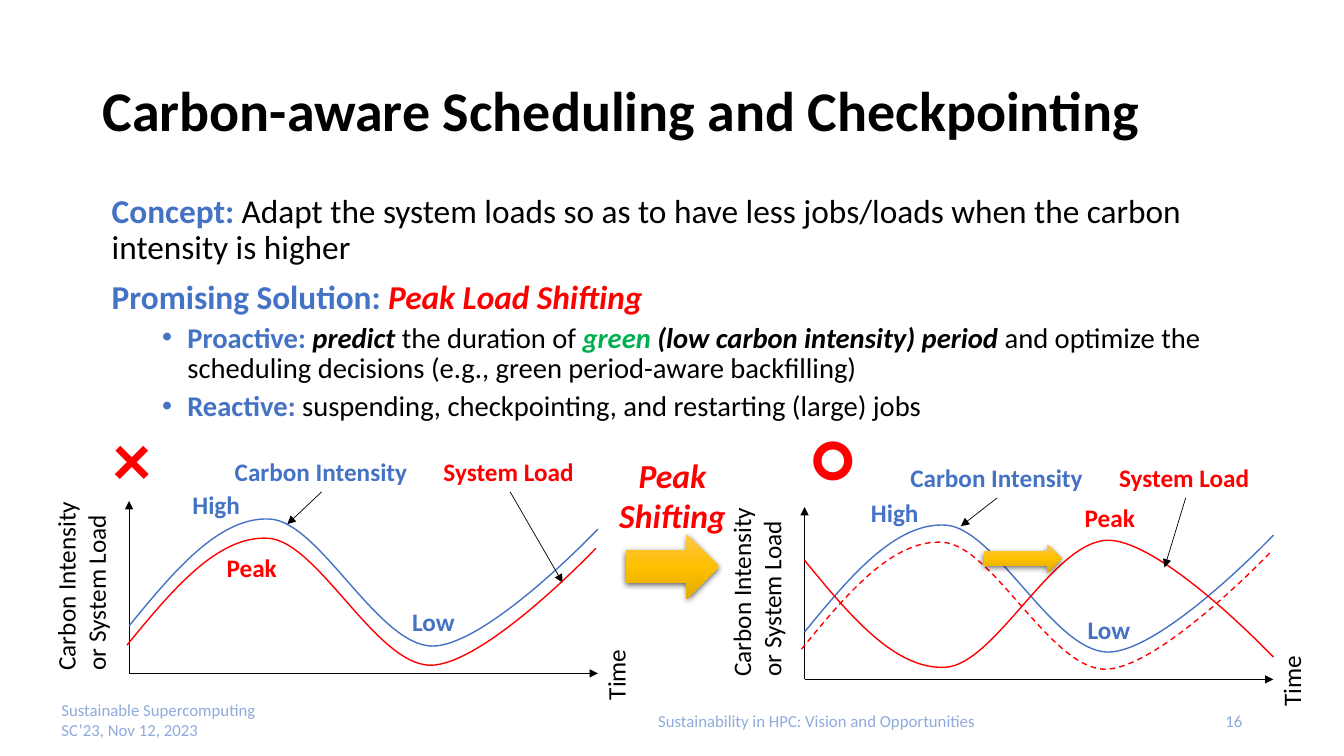
from pptx import Presentation
from pptx import util as u
from pptx.dml.color import RGBColor
from pptx.enum import dml, shapes, text
from pptx.oxml import parse_xml
from pptx.oxml.ns import nsdecls, qn
from lxml import etree

PX = 9144  # EMU per px, 100 px to the inch
FONT = "Calibri"
COLORS = {
    "black": "000000", "blue": "4472C4", "red": "FF0000", "green": "00B050",
    "footer": "8FAADC", "gold_light": "FFC64B", "gold": "FFC000", "gold_dark": "E3AB00",
}
# Start point, then three points for each cubic segment, relative to the crest
WAVE = [(0, 106), (45, 51), (90, -3), (140, 0), (189, 3), (246, 124),
        (300, 126), (354, 127), (465, 10), (465, 10)]

BODY = [
    (0, [("Concept: ", "blue", "b"),
         ("Adapt the system loads so as to have less jobs/loads when the carbon "
          "intensity is higher", "black", "")]),
    (0, [("Promising Solution: ", "blue", "b"), ("Peak Load Shifting", "red", "bi")]),
    (1, [("Proactive: ", "blue", "b"), ("predict ", "black", "bi"),
         ("the duration of ", "black", ""), ("green ", "green", "bi"),
         ("(low carbon intensity) period ", "black", "bi"),
         ("and optimize the scheduling decisions (e.g., green period-aware backfilling)",
          "black", "")]),
    (1, [("Reactive: ", "blue", "b"),
         ("suspending, checkpointing, and restarting (large) jobs", "black", "")]),
]


def px(*lengths):
    return [u.Emu(round(length * PX)) for length in lengths]


def rgb(color):
    return RGBColor.from_string(COLORS[color])


def add_run(paragraph, words, size, color, bold=False, italic=False):
    run = paragraph.add_run()
    run.text = words
    font = run.font
    font.name, font.size, font.bold, font.italic = FONT, u.Pt(size), bold, italic
    font.color.rgb = rgb(color)


def add_text(slide, words, box, size=18, color="black", bold=False, italic=False,
             align=text.PP_ALIGN.LEFT, anchor=text.MSO_ANCHOR.TOP, wrap=False,
             rotation=0, line_spacing=None):
    """Add a text box with one paragraph for each line of words."""
    shape = slide.shapes.add_textbox(*px(*box))
    shape.rotation = rotation
    frame = shape.text_frame
    frame.word_wrap, frame.vertical_anchor = wrap, anchor
    for index, line in enumerate(words.split("\n")):
        paragraph = frame.add_paragraph() if index else frame.paragraphs[0]
        paragraph.alignment = align
        paragraph.line_spacing = line_spacing
        add_run(paragraph, line, size, color, bold, italic)


def add_bullet(paragraph, color):
    properties = paragraph._p.get_or_add_pPr()
    properties.set("marL", str(75 * PX))
    properties.set("indent", str(-25 * PX))
    bullet_color = etree.SubElement(properties, qn("a:buClr"))
    etree.SubElement(bullet_color, qn("a:srgbClr"), val=COLORS[color])
    etree.SubElement(properties, qn("a:buFont"), typeface="Arial")
    etree.SubElement(properties, qn("a:buChar"), char="•")


def add_body(slide):
    frame = slide.shapes.add_textbox(*px(101, 188, 1168, 247)).text_frame
    frame.word_wrap = True
    for index, (level, runs) in enumerate(BODY):
        paragraph = frame.add_paragraph() if index else frame.paragraphs[0]
        if level:
            paragraph.level = level
            add_bullet(paragraph, "blue")
        paragraph.line_spacing = 0.9
        if index:
            paragraph.space_before = u.Pt(5 if level else 10)
        for words, color, style in runs:
            add_run(paragraph, words, 20.4 if level else 23.8, color,
                    "b" in style, "i" in style)


def add_arrow_line(slide, start, end):
    line = slide.shapes.add_connector(shapes.MSO_CONNECTOR.STRAIGHT, *px(*start, *end))
    line.line.width = u.Pt(0.5)
    line.line.color.rgb = rgb("black")
    etree.SubElement(line.line._get_or_add_ln(), qn("a:tailEnd"), type="triangle")
    etree.SubElement(line._element.spPr, qn("a:effectLst"))


def add_wave(slide, left, crest, color, direction=1, dashed=False):
    """Draw the wave; direction -1 turns it upside down about the crest line."""
    points = [(x, direction * y) for x, y in WAVE]
    anchors = points[::3]
    top = min(y for _, y in anchors)
    corners = [px(left + x, crest + y) for x, y in anchors]
    builder = slide.shapes.build_freeform(*corners[0])
    builder.add_line_segments(corners[1:], close=False)
    shape = builder.convert_to_shape()
    # Each straight segment becomes a cubic one by adding its two control points
    for index, segment in enumerate(list(shape._element.iter(qn("a:lnTo")))):
        segment.tag = qn("a:cubicBezTo")
        for place, (x, y) in enumerate(points[3 * index + 1:3 * index + 3]):
            control = etree.Element(qn("a:pt"), x=str(x * PX), y=str((y - top) * PX))
            segment.insert(place, control)
    shape.shadow.inherit = False
    shape.fill.background()
    shape.line.color.rgb = rgb(color)
    shape.line.width = u.Pt(1)
    if dashed:
        shape.line.dash_style = dml.MSO_LINE.DASH


def add_block_arrow(slide, box):
    shape = slide.shapes.add_shape(shapes.MSO_SHAPE.RIGHT_ARROW, *px(*box))
    stops = "".join(
        f'<a:gs pos="{position}"><a:srgbClr val="{COLORS[color]}"/></a:gs>'
        for position, color in ((0, "gold_light"), (50000, "gold"), (100000, "gold_dark")))
    properties = shape._element.spPr
    properties.append(parse_xml(
        f'<a:gradFill {nsdecls("a")} rotWithShape="1"><a:gsLst>{stops}</a:gsLst>'
        '<a:lin ang="5400000" scaled="0"/></a:gradFill>'))
    shape.line.fill.background()
    properties.append(parse_xml(
        f'<a:effectLst {nsdecls("a")}><a:outerShdw blurRad="57150" dist="19050" '
        'dir="5400000" algn="ctr" rotWithShape="0"><a:srgbClr val="000000">'
        '<a:alpha val="63000"/></a:srgbClr></a:outerShdw></a:effectLst>'))


def add_chart_frame(slide, left, bottom):
    """Add axes, axis names, curve names and the carbon intensity wave."""
    add_text(slide, "Time", (left + 447, bottom - 19, 71, 40), rotation=270)
    add_arrow_line(slide, (left, bottom), (left, bottom - 171))
    add_arrow_line(slide, (left, bottom), (left + 465, bottom))
    add_text(slide, "Carbon Intensity\nor System Load",
             (left - 145, bottom - 126, 195, 71), rotation=270)
    add_wave(slide, left, bottom - 153, "blue")
    for words, offset, width, color in (("Carbon Intensity", 95, 193, "blue"),
                                        ("System Load", 302, 151, "red")):
        add_text(slide, words, (left + offset, bottom - 220, width, 40),
                 color=color, bold=True)


def add_marks(slide, high, peak, low, verdict, verdict_box):
    """Add the labels along the curves and the verdict sign of a chart."""
    for words, corner, width, color in (("Peak", peak, 70, "red"),
                                        ("High", high, 68, "blue"),
                                        ("Low", low, 63, "blue")):
        add_text(slide, words, (*corner, width, 40), color=color, bold=True)
    add_text(slide, verdict, verdict_box, size=54, color="red", bold=True)


def main():
    presentation = Presentation()
    presentation.slide_width, presentation.slide_height = px(1333, 750)
    slide = presentation.slides.add_slide(presentation.slide_layouts[6])

    middle = text.MSO_ANCHOR.MIDDLE
    add_text(slide, "Carbon-aware Scheduling and Checkpointing", (92, 40, 1150, 145),
             size=40, bold=True, anchor=middle, wrap=True, line_spacing=0.9)
    add_body(slide)
    for words, box, align in (
            ("Sustainable Supercomputing SC’23, Nov 12, 2023", (51, 694, 219, 40),
             text.PP_ALIGN.LEFT),
            ("Sustainability in HPC: Vision and Opportunities", (607, 695, 406, 40),
             text.PP_ALIGN.CENTER),
            ("16", (1086, 695, 156, 40), text.PP_ALIGN.RIGHT)):
        add_text(slide, words, box, size=12, color="footer", align=align,
                 anchor=middle, wrap=True)

    add_chart_frame(slide, 128, 668)
    add_arrow_line(slide, (319, 488), (285, 520))
    add_arrow_line(slide, (506, 488), (558, 578))
    add_marks(slide, (181, 481), (215, 543), (399, 597), "×", (103, 403, 58, 101))
    add_wave(slide, 126, 534, "red")

    add_block_arrow(slide, (621, 530, 92, 64))
    add_text(slide, "Peak\nShifting", (603, 446, 128, 91), size=24, color="red",
             bold=True, italic=True, align=text.PP_ALIGN.CENTER)

    add_chart_frame(slide, 798, 674)
    add_wave(slide, 798, 662, "red", direction=-1)
    add_arrow_line(slide, (989, 494), (953, 522))
    add_arrow_line(slide, (1176, 494), (1155, 563))
    add_marks(slide, (854, 488), (1066, 493), (1069, 605), "○", (796, 401, 62, 101))
    add_wave(slide, 795, 538, "red", dashed=True)
    add_block_arrow(slide, (976, 540, 77, 28))

    presentation.save("out.pptx")


if __name__ == "__main__":
    main()
